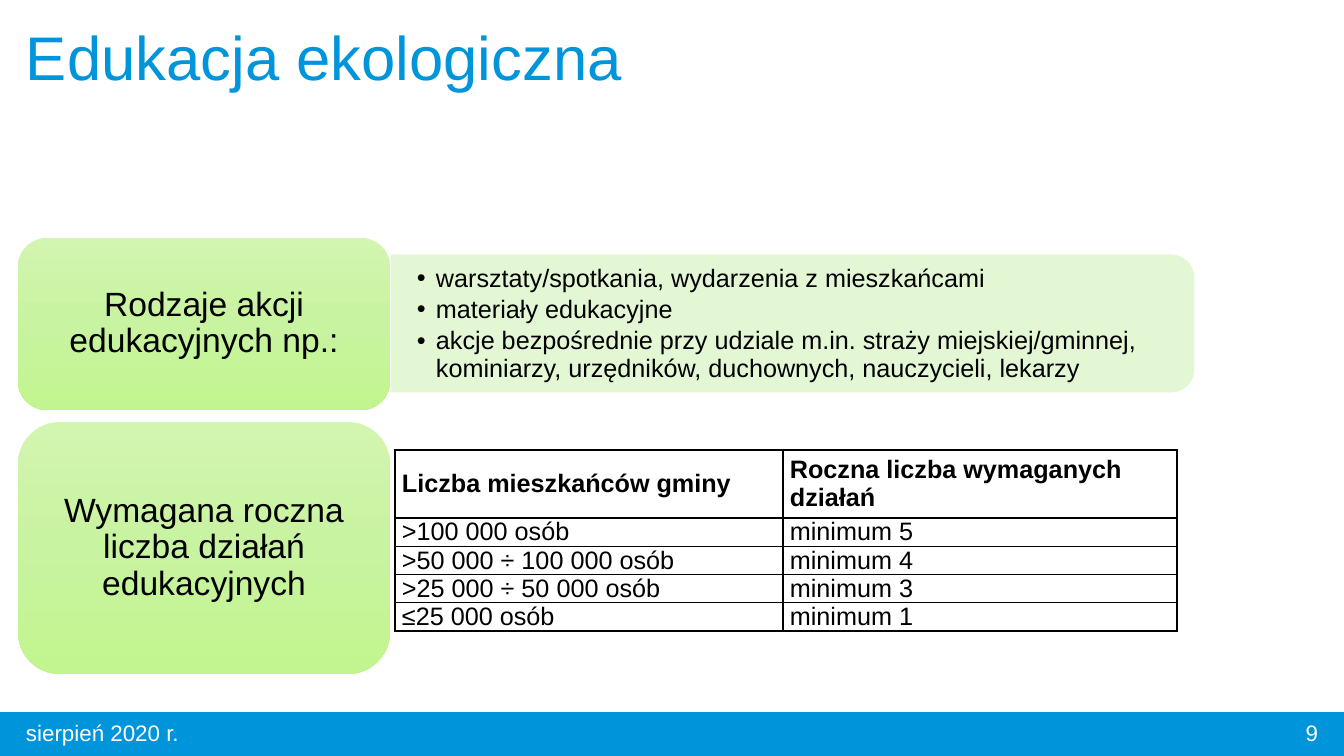
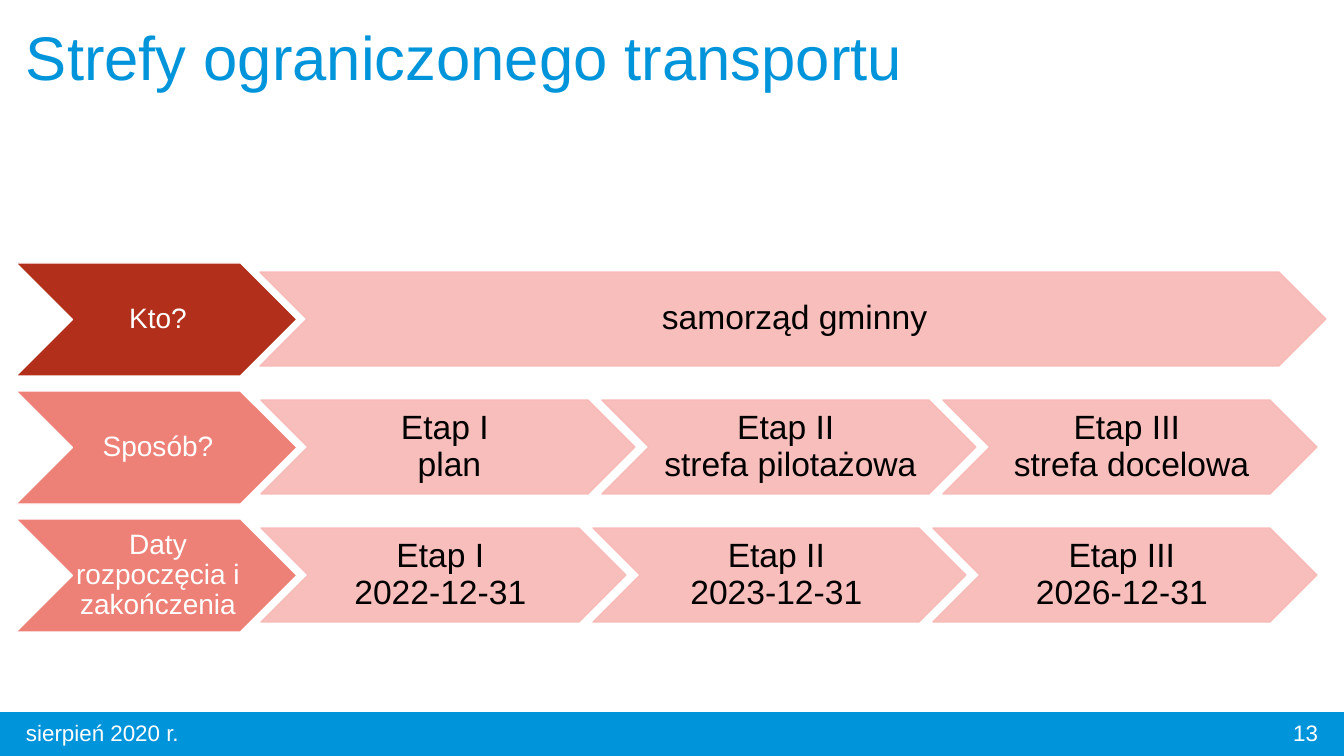
from copy import deepcopy
from dataclasses import dataclass

from lxml import etree
from pptx import Presentation
from pptx.dml.color import RGBColor
from pptx.enum.shapes import MSO_SHAPE
from pptx.enum.text import MSO_ANCHOR, MSO_AUTO_SIZE, PP_ALIGN
from pptx.oxml.ns import qn
from pptx.util import Pt

LEFT, CENTER, RIGHT, JUSTIFY = PP_ALIGN.LEFT, PP_ALIGN.CENTER, PP_ALIGN.RIGHT, PP_ALIGN.JUSTIFY
TOP, MIDDLE = MSO_ANCHOR.TOP, MSO_ANCHOR.MIDDLE
RECTANGLE, ROUNDED = MSO_SHAPE.RECTANGLE, MSO_SHAPE.ROUNDED_RECTANGLE
ROUNDED_TOP, CHEVRON = MSO_SHAPE.ROUND_2_SAME_RECTANGLE, MSO_SHAPE.CHEVRON


@dataclass(frozen=True)
class Theme:
    font: str = "Arial"
    blue: str = "0094DA"
    white: str = "FFFFFF"
    black: str = "000000"
    pale_green: str = "E1F7D1"
    greens: tuple = ((0, "D2F5AF"), (0.5, "C8F3A0"), (1, "C2F58F"))
    dark_red: str = "B2301B"
    coral: str = "EE8177"
    pink: str = "F7B8B5"
    title: int = 44
    heading: int = 24
    label: int = 20
    body: int = 18
    footer: int = 16


theme = Theme()
EMU_PER_PX = 12192000 / 1344


def px(*lengths):
    return [round(length * EMU_PER_PX) for length in lengths]


def write(frame, lines, size, color, align=LEFT, anchor=MIDDLE, margins=(10, 5, 10, 5), spacing=1.0):
    frame.word_wrap = True
    frame.auto_size = MSO_AUTO_SIZE.NONE
    frame.vertical_anchor = anchor
    frame.margin_left, frame.margin_top, frame.margin_right, frame.margin_bottom = px(*margins)
    for index, line in enumerate(lines):
        para = frame.add_paragraph() if index else frame.paragraphs[0]
        para.text = line
        para.alignment = align
        para.line_spacing = spacing
        para.space_before = Pt(0)
        para.font.name = theme.font
        para.font.size = Pt(size)
        para.font.color.rgb = RGBColor.from_string(color)


deck = Presentation()
deck.slide_width, deck.slide_height = px(1344, 756)

pages = []
for layout, title, number in [
    (1, "Edukacja ekologiczna", "9"),
    (5, "Strefy ograniczonego transportu", "13"),
]:
    page = deck.slides.add_slide(deck.slide_layouts[layout])
    heading = page.shapes.title
    heading.left, heading.top, heading.width, heading.height = px(16, 22, 1038, 86)
    write(heading.text_frame, [title], theme.title, theme.blue, anchor=TOP, spacing=0.9)
    for left, width, text, align in [(1026, 302, number, RIGHT), (16, 403, "sierpień 2020 r.", LEFT)]:
        box = page.shapes.add_textbox(*px(left, 713, width, 40))
        write(box.text_frame, [text], theme.footer, theme.white, align)
    pages.append(page)
education, zones = pages

band = education.shapes.add_shape(RECTANGLE, *px(0, 713, 1344, 43))
band.shadow.inherit = False
band.fill.solid()
band.fill.fore_color.rgb = band.line.color.rgb = RGBColor.from_string(theme.blue)
band.line.width = Pt(1)
deck.slide_master.shapes.element.insert(2, band.element)

panel = education.shapes.add_shape(ROUNDED_TOP, *px(724, -78, 137, 803))
panel.rotation = 90
panel.shadow.inherit = False
panel.fill.solid()
panel.fill.fore_color.rgb = panel.line.color.rgb = RGBColor.from_string(theme.pale_green)
panel.line.width = Pt(0.5)
translucent = [panel]

actions = education.placeholders[1]
actions.element.addprevious(panel.element)
actions.left, actions.top, actions.width, actions.height = px(390, 262, 797, 124)
write(
    actions.text_frame,
    [
        "warsztaty/spotkania, wydarzenia z mieszkańcami",
        "materiały edukacyjne",
        "akcje bezpośrednie przy udziale m.in. straży miejskiej/gminnej, "
        "kominiarzy, urzędników, duchownych, nauczycieli, lekarzy",
    ],
    theme.body, theme.black, margins=(27, 14, 27, 14), spacing=0.9,
)
for para in actions.text_frame.paragraphs:
    para.space_after = Pt(3)
    properties = para._p.get_or_add_pPr()
    hanging = px(19)[0]
    properties.set("marL", str(hanging))
    properties.set("indent", str(-hanging))

for top, height, text in [
    (238, 172, "Rodzaje akcji edukacyjnych np.:"),
    (422, 252, "Wymagana roczna liczba działań edukacyjnych"),
]:
    card = education.shapes.add_shape(ROUNDED, *px(18, top, 372, height))
    card.shadow.inherit = False
    card.line.fill.background()
    card.fill.gradient()
    card.fill.gradient_angle = 270
    stops = card.element.spPr.find(".//" + qn("a:gsLst"))
    stops.insert(1, deepcopy(stops[0]))
    for stop, (position, color) in zip(card.fill.gradient_stops, theme.greens):
        stop.position = position
        stop.color.rgb = RGBColor.from_string(color)
    write(card.text_frame, [text], theme.heading, theme.black, CENTER, spacing=0.9)

requirements = [
    ("Liczba mieszkańców gminy", "Roczna liczba wymaganych działań"),
    (">100 000 osób", "minimum 5"),
    (">50 000 ÷ 100 000 osób", "minimum 4"),
    (">25 000 ÷ 50 000 osób", "minimum 3"),
    ("≤25 000 osób", "minimum 1"),
]
table = education.shapes.add_table(len(requirements), 2, *px(395, 450, 782, 180)).table
table.first_row = table.horz_banding = False
for column, width in zip(table.columns, px(388, 394)):
    column.width = width
for row_index, texts in enumerate(requirements):
    is_header = row_index == 0
    table.rows[row_index].height = px(68 if is_header else 28)[0]
    for column_index, text in enumerate(texts):
        cell = table.cell(row_index, column_index)
        write(cell.text_frame, [text], theme.body, theme.black, LEFT if is_header else JUSTIFY)
        cell.text_frame.paragraphs[0].font.bold = is_header
        cell.vertical_anchor = MIDDLE
        cell.margin_left, cell.margin_top, cell.margin_right, cell.margin_bottom = px(7, 0, 7, 0)
        cell_properties = cell._tc.get_or_add_tcPr()
        for side in ("a:lnL", "a:lnR", "a:lnT", "a:lnB"):
            border = etree.SubElement(cell_properties, qn(side), w=str(Pt(1)))
            ink = etree.SubElement(border, qn("a:solidFill"))
            etree.SubElement(ink, qn("a:srgbClr"), val=theme.black)
        cell.fill.background()

ROW_TOP, ROW_PITCH, STAGE_OVERLAP = 263, 128, 33
process = [
    ("Kto?", theme.dark_red, 260, [(1066, "samorząd gminny")]),
    ("Sposób?", theme.coral, 261, [
        (374, "Etap I \nplan"),
        (374, "Etap II \nstrefa pilotażowa"),
        (374, "Etap III \nstrefa docelowa"),
    ]),
    ("Daty rozpoczęcia i zakończenia", theme.coral, 261, [
        (365, "Etap I \n2022-12-31 "),
        (373, "Etap II \n2023-12-31 "),
        (384, "Etap III \n2026-12-31 "),
    ]),
]
for row_index, (question, color, left, stages) in enumerate(process):
    top = ROW_TOP + row_index * ROW_PITCH
    chevrons = [(16, top, 281, 113, question, color, theme.white, theme.white, theme.label, 1)]
    for width, text in stages:
        chevrons.append((left, top + 9, width, 94, text, theme.pink, theme.pink, theme.black, theme.heading, 2))
        left += width - STAGE_OVERLAP
    for x, y, width, height, text, fill, outline, ink, size, margin in chevrons:
        chevron = zones.shapes.add_shape(CHEVRON, *px(x, y, width, height))
        chevron.shadow.inherit = False
        chevron.fill.solid()
        chevron.fill.fore_color.rgb = RGBColor.from_string(fill)
        chevron.line.color.rgb = RGBColor.from_string(outline)
        chevron.line.width = Pt(1)
        write(chevron.text_frame, [text], size, ink, CENTER, margins=(3, margin, 0, margin), spacing=0.9)
        if fill == theme.pink:
            translucent.append(chevron)

for shape in translucent:
    for color in shape.element.spPr.iter(qn("a:srgbClr")):
        etree.SubElement(color, qn("a:alpha"), val="90000")

deck.save("out.pptx")
